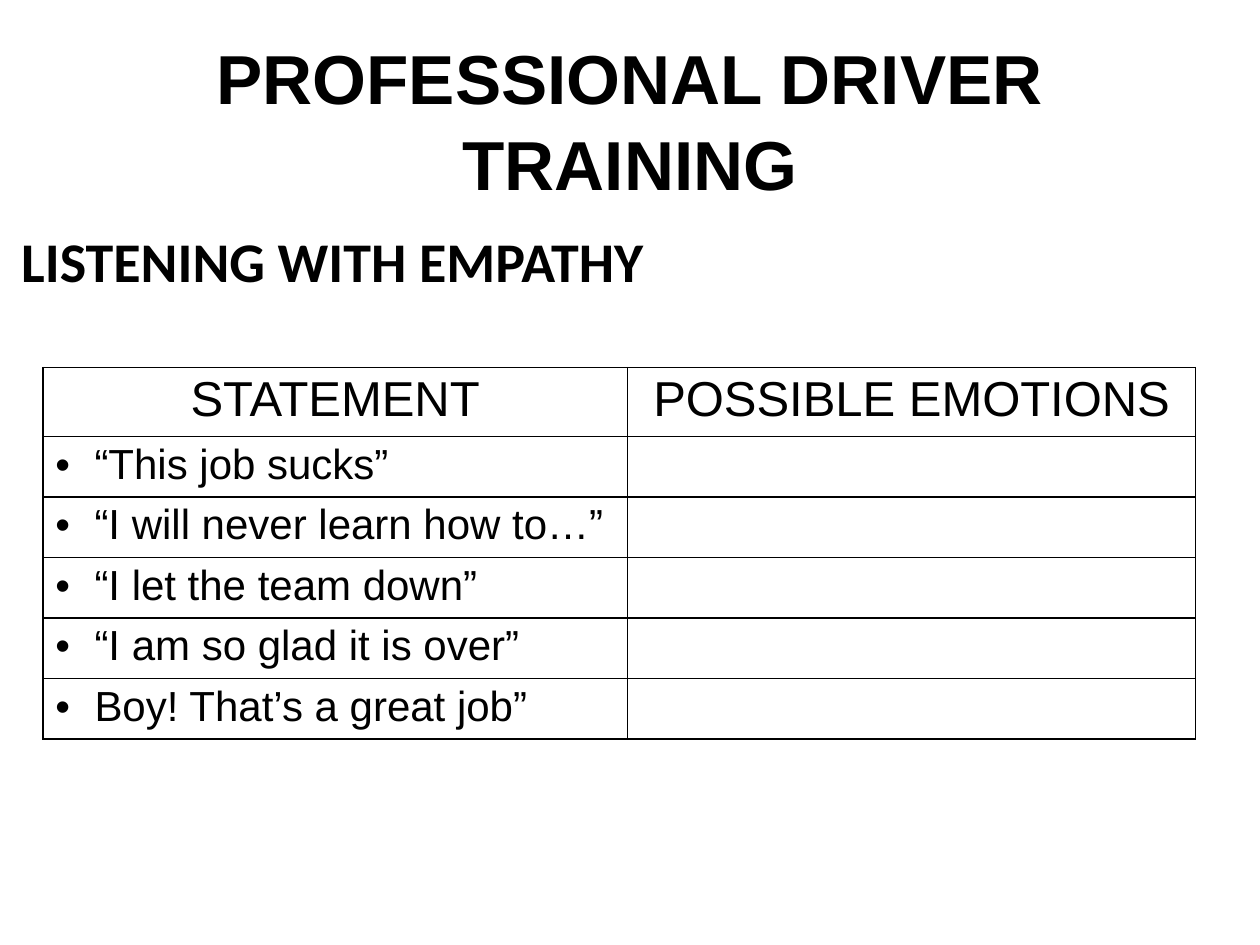
import pptx
import pptx.dml.color
import pptx.enum.text
import pptx.oxml
import pptx.oxml.ns
import pptx.util
from lxml import etree

COLORS = {"ink": "000000", "paper": "FFFFFF"}
WIDTH, HEIGHT = pptx.util.Inches(10), pptx.util.Inches(7.5)
CENTER = pptx.enum.text.PP_ALIGN.CENTER
MIDDLE = pptx.enum.text.MSO_ANCHOR.MIDDLE
COLUMN_WIDTHS = (4.64, 4.51)
HEADER_HEIGHT, STATEMENT_HEIGHT = 0.54, 0.47
HEADERS = ("STATEMENT", "POSSIBLE EMOTIONS")
STATEMENTS = (
    "“This job sucks”",
    "“I will never learn how to…”",
    "“I let the team down”",
    "“I am so glad it is over”",
    "Boy! That’s a great job”",
)
TITLE_FONT = {"name": "Arial", "size": pptx.util.Pt(39.6), "bold": True}
HEADING_FONT = {"name": "Calibri", "size": pptx.util.Pt(32), "bold": True}
HEADER_FONT = {"name": "Arial", "size": pptx.util.Pt(28), "bold": False}
STATEMENT_FONT = {"name": "Arial", "size": pptx.util.Pt(24), "bold": False}
CELL_FORMAT = {
    "margin_left": pptx.util.Inches(0.1),
    "margin_right": pptx.util.Inches(0.1),
    "margin_top": pptx.util.Inches(0.04),
    "margin_bottom": pptx.util.Inches(0.04),
}


def apply_format(target, values):
    for attribute, value in values.items():
        setattr(target, attribute, value)


def rgb(color):
    return pptx.dml.color.RGBColor.from_string(COLORS[color])


def write_text(frame, text, font, paragraph_format):
    paragraph = frame.paragraphs[0]
    apply_format(paragraph, paragraph_format)
    run = paragraph.add_run()
    run.text = text
    apply_format(run.font, font)
    run.font.color.rgb = rgb("ink")
    return paragraph


def add_text(slide, shares, text, font, frame_format, paragraph_format):
    left, top, width, height = shares
    box = slide.shapes.add_textbox(
        int(WIDTH * left), int(HEIGHT * top), int(WIDTH * width), int(HEIGHT * height)
    )
    apply_format(box.text_frame, {"word_wrap": True, **frame_format})
    write_text(box.text_frame, text, font, paragraph_format)


def add_bullet(paragraph):
    indent = pptx.util.Inches(0.31)
    properties = paragraph._p.get_or_add_pPr()
    properties.set("marL", str(indent))
    properties.set("indent", str(-indent))
    etree.SubElement(properties, pptx.oxml.ns.qn("a:buFont")).set("typeface", "Arial")
    etree.SubElement(properties, pptx.oxml.ns.qn("a:buChar")).set("char", "•")


def style_cell(cell):
    apply_format(cell, CELL_FORMAT)
    cell.fill.solid()
    cell.fill.fore_color.rgb = rgb("paper")
    properties = cell._tc.get_or_add_tcPr()
    for position, side in enumerate(("lnL", "lnR", "lnT", "lnB")):
        border = pptx.oxml.parse_xml(
            f'<a:{side} {pptx.oxml.ns.nsdecls("a")} w="{pptx.util.Pt(1)}">'
            f'<a:solidFill><a:srgbClr val="{COLORS["ink"]}"/></a:solidFill></a:{side}>'
        )
        properties.insert(position, border)


def add_emotion_table(slide):
    row_heights = [HEADER_HEIGHT] + [STATEMENT_HEIGHT] * len(STATEMENTS)
    table = slide.shapes.add_table(
        len(row_heights),
        len(COLUMN_WIDTHS),
        int(WIDTH * 0.034),
        int(HEIGHT * 0.389),
        pptx.util.Inches(sum(COLUMN_WIDTHS)),
        pptx.util.Inches(sum(row_heights)),
    ).table
    for column, width in zip(table.columns, COLUMN_WIDTHS):
        column.width = pptx.util.Inches(width)
    for row, height in zip(table.rows, row_heights):
        row.height = pptx.util.Inches(height)
    for cell in table.iter_cells():
        style_cell(cell)
    for column, header in enumerate(HEADERS):
        frame = table.cell(0, column).text_frame
        write_text(frame, header, HEADER_FONT, {"alignment": CENTER})
    for row, statement in enumerate(STATEMENTS, start=1):
        frame = table.cell(row, 0).text_frame
        add_bullet(write_text(frame, statement, STATEMENT_FONT, {}))


def main():
    presentation = pptx.Presentation()
    apply_format(presentation, {"slide_width": WIDTH, "slide_height": HEIGHT})
    slide = presentation.slides.add_slide(presentation.slide_layouts[6])
    add_text(
        slide, (0.05, 0.04, 0.9, 0.17), "PROFESSIONAL DRIVER TRAINING", TITLE_FONT,
        {"vertical_anchor": MIDDLE}, {"alignment": CENTER, "line_spacing": 1.04},
    )
    add_text(
        slide, (0.007, 0.233, 0.9, 0.66), "LISTENING WITH EMPATHY", HEADING_FONT, {}, {}
    )
    add_emotion_table(slide)
    presentation.save("out.pptx")


if __name__ == "__main__":
    main()
